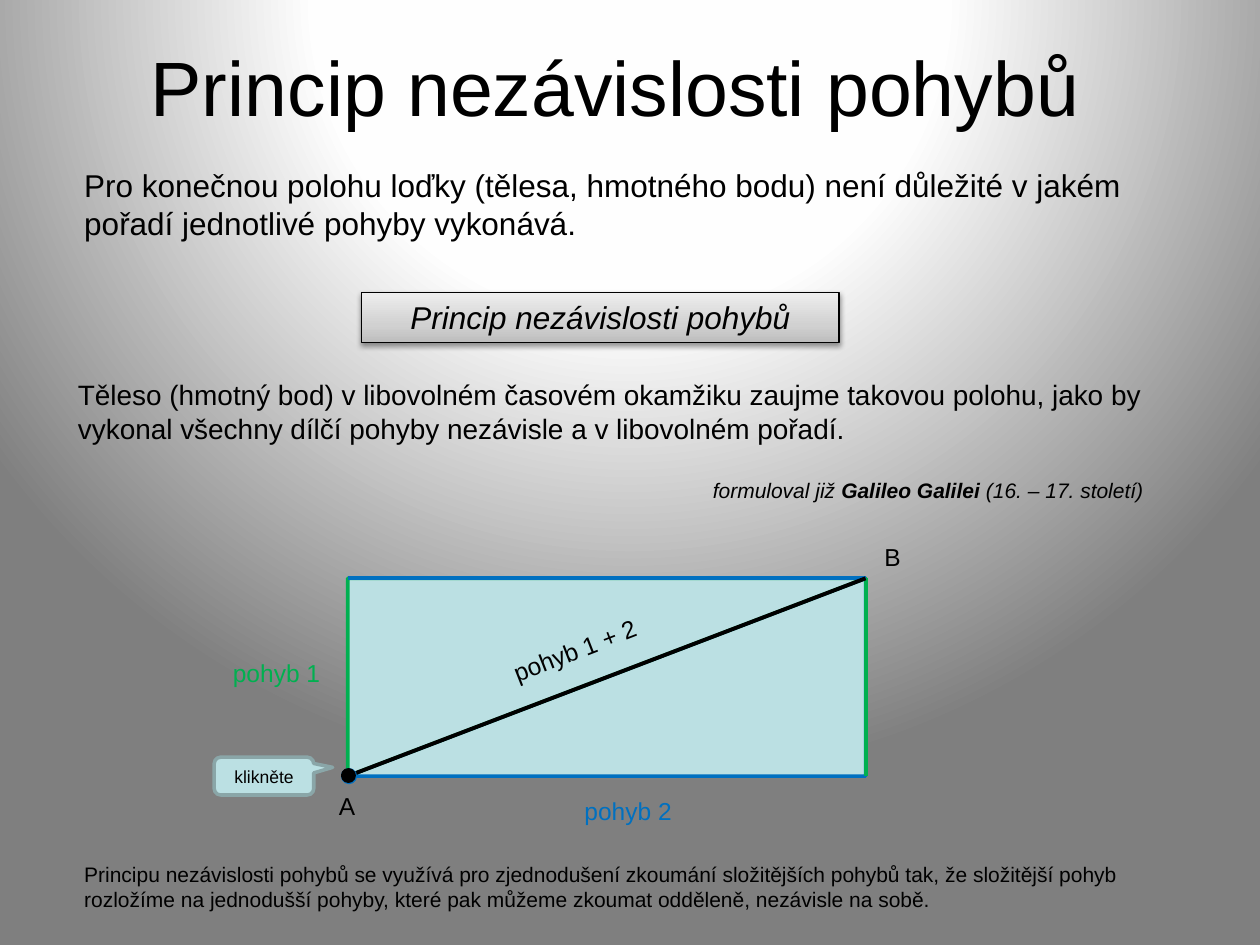
from dataclasses import dataclass

from lxml.etree import SubElement
from pptx import Presentation
from pptx.dml.color import RGBColor
from pptx.enum.shapes import MSO_CONNECTOR, MSO_SHAPE
from pptx.enum.text import MSO_ANCHOR, PP_ALIGN
from pptx.oxml import parse_xml
from pptx.oxml.ns import nsdecls, qn
from pptx.util import Inches, Pt

COLORS = {
    "black": "000000", "blue": "0070C0", "green": "00B050",
    "aqua": "BBE0E3", "aqua_dark": "8AA6A8",
}
BUTTON_STOPS = [(0, "BDBDBD"), (35, "D1D1D1"), (100, "EEEEEE")]
BACKGROUND_STOPS = [(0, "FFFFFF"), (40, "FEFEFE"), (100, "7F7F7F")]
COLUMNS, ROWS = 100, 75
CELL = Inches(0.1)


@dataclass
class Box:
    """A rectangle measured in grid columns and rows."""
    left: float
    top: float
    width: float
    height: float

    def inner(self, left, top, width, height):
        """Return a box placed from this box's top left corner."""
        return Box(self.left + left, self.top + top, width, height)

    def point(self, across, down):
        """Return the grid point at the given shares of this box."""
        return self.left + across * self.width, self.top + down * self.height

    def lengths(self):
        """Return left, top, width and height as slide lengths."""
        return [int(value * CELL) for value in (self.left, self.top, self.width, self.height)]


def color(name):
    """Return the named colour."""
    return RGBColor.from_string(COLORS[name])


def gradient(stops, direction):
    """Return a gradient fill element with the given direction element."""
    marks = "".join(
        f'<a:gs pos="{share * 1000}"><a:srgbClr val="{value}"/></a:gs>' for share, value in stops
    )
    return parse_xml(
        f'<a:gradFill {nsdecls("a")} rotWithShape="1"><a:gsLst>{marks}</a:gsLst>{direction}</a:gradFill>'
    )


def write(shape, runs, size, ink="black", align=PP_ALIGN.LEFT, italic=False,
          anchor=MSO_ANCHOR.TOP, wrap=True):
    """Fill a shape with one paragraph of (text, bold) runs."""
    frame = shape.text_frame
    frame.word_wrap = wrap
    frame.vertical_anchor = anchor
    paragraph = frame.paragraphs[0]
    paragraph.alignment = align
    for text, bold in runs:
        run = paragraph.add_run()
        run.text = text
        run.font.name = "Arial"
        run.font.size = Pt(size)
        run.font.bold = bold
        run.font.italic = italic
        run.font.color.rgb = color(ink)


def add_text(slide, box, text, size, **style):
    """Add a text box and return it."""
    shape = slide.shapes.add_textbox(*box.lengths())
    write(shape, [(text, False)] if isinstance(text, str) else text, size, **style)
    return shape


def add_solid(slide, kind, box, fill, line, width=2):
    """Add a filled and outlined preset shape."""
    shape = slide.shapes.add_shape(kind, *box.lengths())
    shape.shadow.inherit = False
    shape.fill.solid()
    shape.fill.fore_color.rgb = color(fill)
    shape.line.color.rgb = color(line)
    shape.line.width = Pt(width)
    return shape


def add_line(slide, start, end, ink):
    """Add a straight line between two grid points."""
    ends = [int(value * CELL) for value in (*start, *end)]
    connector = slide.shapes.add_connector(MSO_CONNECTOR.STRAIGHT, *ends)
    connector.line.color.rgb = color(ink)
    connector.line.width = Pt(2.25)
    SubElement(connector._element.spPr, qn("a:effectLst"))


def set_background(slide):
    """Give the slide a circular grey gradient."""
    slide.background.fill.solid()
    properties = slide.background._cSld.bg.bgPr
    direction = (
        '<a:path path="circle"><a:fillToRect l="50000" t="-80000" r="50000" b="180000"/></a:path>'
    )
    properties.replace(properties.find(qn("a:solidFill")), gradient(BACKGROUND_STOPS, direction))


def add_button(slide, box, text):
    """Add the raised gradient plate that names the principle."""
    shape = add_solid(slide, MSO_SHAPE.RECTANGLE, box, "aqua", "black", 0.75)
    properties = shape._element.spPr
    properties.replace(
        properties.find(qn("a:solidFill")),
        gradient(BUTTON_STOPS, '<a:lin ang="16200000" scaled="0"/>'),
    )
    properties.find(qn("a:effectLst")).append(parse_xml(
        f'<a:outerShdw {nsdecls("a")} blurRad="{Pt(3.1)}" dist="{Pt(1.6)}" dir="5400000" '
        'rotWithShape="0"><a:srgbClr val="000000"><a:alpha val="38000"/></a:srgbClr></a:outerShdw>'
    ))
    write(shape, [(text, False)], 18, align=PP_ALIGN.CENTER, italic=True)


def add_statement(slide, box):
    """Add the title, the explanation and the wording of the principle."""
    name = "Princip nezávislosti pohybů"
    add_text(slide, box.inner(0, 0, 89.1, 7.8), name, 44,
             align=PP_ALIGN.CENTER, anchor=MSO_ANCHOR.MIDDLE)
    add_text(slide, box.inner(1.4, 9.8, 90.1, 7.1),
             "Pro konečnou polohu loďky (tělesa, hmotného bodu) není důležité v jakém pořadí "
             "jednotlivé pohyby vykonává.", 18)
    add_text(slide, box.inner(0.9, 26.6, 88.1, 6.4),
             "Těleso (hmotný bod) v libovolném časovém okamžiku zaujme takovou polohu, jako by "
             "vykonal všechny dílčí pohyby nezávisle a v libovolném pořadí.", 16)
    add_button(slide, box.inner(24.4, 20.3, 37.9, 4), name)
    add_text(slide, box.inner(51.3, 34.5, 36.7, 3),
             [("formuloval již ", False), ("Galileo Galilei ", True),
              ("(16. – 17. století)", False)], 12, italic=True)


def add_diagram(slide, box):
    """Add the rectangle of motions with its diagonal, points and labels."""
    for flip, line, start, end, edge in (
        ("flipH", "blue", (1, 0), (1, 1), "green"),
        ("flipV", "green", (0, 0), (1, 0), "blue"),
    ):
        triangle = add_solid(slide, MSO_SHAPE.RIGHT_TRIANGLE, box, "aqua", line)
        triangle._element.spPr.xfrm.set(flip, "1")
        add_line(slide, box.point(*start), box.point(*end), edge)
    add_line(slide, box.point(0, 1), box.point(1, 0), "black")

    for ink, size in (("blue", 1), ("black", 0.9)):
        add_solid(slide, MSO_SHAPE.OVAL, box.inner(-0.4, 15.2, size, size), ink, ink)

    for text, ink, angle, place in (
        ("pohyb 2", "blue", 0, (17.8, 16.8, 9, 3.4)),
        ("pohyb 1", "green", 0, (-10.1, 5.8, 9, 3.4)),
        ("pohyb 1 + 2", "black", 338.7, (11.9, 4, 12.5, 3.4)),
        ("A", "black", 0, (-1.7, 16.4, 2.9, 3.4)),
        ("B", "black", 0, (41.6, -3.4, 2.9, 3.4)),
    ):
        label = add_text(slide, box.inner(*place), text, 14, ink=ink, wrap=False)
        label.rotation = angle

    callout = add_solid(slide, MSO_SHAPE.ROUNDED_RECTANGULAR_CALLOUT,
                        box.inner(-10.6, 14.2, 7.9, 3), "aqua", "aqua_dark")
    for index, value in enumerate((0.69, -0.23, 0.17)):
        callout.adjustments[index] = value
    write(callout, [("klikněte", False)], 10, align=PP_ALIGN.CENTER, anchor=MSO_ANCHOR.MIDDLE)


def add_conclusion(slide, box):
    """Add the closing remark on how the principle is used."""
    add_text(slide, box,
             "Principu nezávislosti pohybů se využívá pro zjednodušení zkoumání složitějších "
             "pohybů tak, že složitější pohyb rozložíme na jednodušší pohyby, které pak můžeme "
             "zkoumat odděleně, nezávisle na sobě.", 12)


def main():
    """Build the slide and save it."""
    presentation = Presentation()
    presentation.slide_width = COLUMNS * CELL
    presentation.slide_height = ROWS * CELL
    slide = presentation.slides.add_slide(presentation.slide_layouts[6])
    set_background(slide)
    add_statement(slide, Box(4.3, 2.9, 91.5, 37.5))
    add_diagram(slide, Box(27.6, 45.9, 41.1, 15.7))
    add_conclusion(slide, Box(5.7, 67.9, 91.5, 5))
    presentation.save("out.pptx")


if __name__ == "__main__":
    main()
